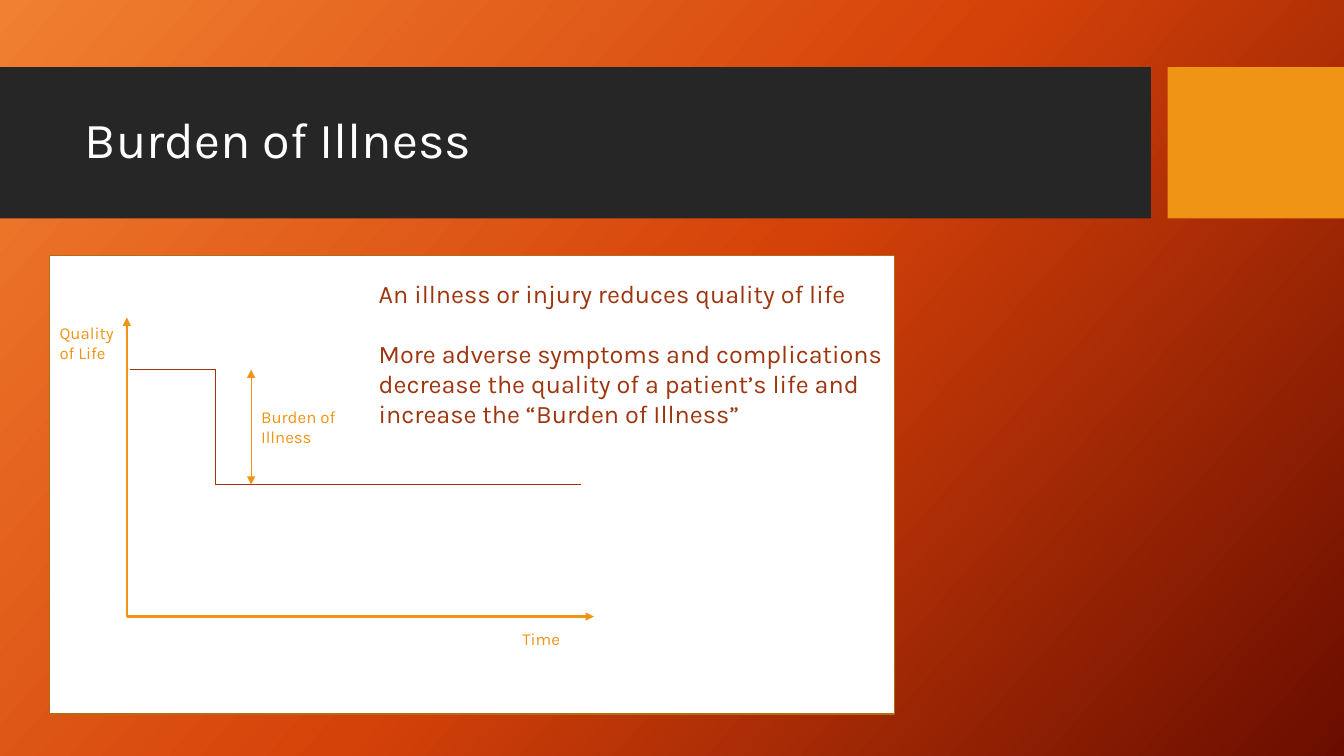
from copy import deepcopy
from dataclasses import dataclass

from lxml import etree
from pptx import Presentation
from pptx.dml.color import RGBColor
from pptx.enum.shapes import MSO_CONNECTOR, MSO_SHAPE
from pptx.enum.text import MSO_ANCHOR, MSO_AUTO_SIZE, PP_ALIGN
from pptx.oxml.ns import qn
from pptx.util import Inches, Pt

RECTANGLE = MSO_SHAPE.RECTANGLE
STRAIGHT = MSO_CONNECTOR.STRAIGHT
MIDDLE = MSO_ANCHOR.MIDDLE
LEFT = PP_ALIGN.LEFT
NO_AUTOFIT = MSO_AUTO_SIZE.NONE
TITLE_ONLY = 5
COLUMNS, ROWS = 16, 9


@dataclass(frozen=True)
class Theme:
    font: str = "Karla"
    white: str = "FFFFFF"
    band: str = "262626"
    accent: str = "F09415"
    rust: str = "9D360E"
    border: str = "B26D10"
    gradient: tuple = ((0, "F18031"), (0.5, "D54209"), (1, "6A0D00"))
    gradient_angle: int = 42
    title_size: int = 36
    body_size: int = 18
    label_size: int = 12
    paragraph_gap: float = 21.5
    axis_width: float = 1.75
    curve_width: float = 0.75


class SlideBuilder:
    """Places styled elements on a grid of 16 columns and 9 rows."""

    def __init__(self, deck, theme):
        self.theme = theme
        self.column = deck.slide_width / COLUMNS
        self.row = deck.slide_height / ROWS
        self.page = deck.slides.add_slide(deck.slide_layouts[TITLE_ONLY])

    def place(self, left, top, width, height):
        return (round(left * self.column), round(top * self.row),
                round(width * self.column), round(height * self.row))

    def background(self):
        fill = self.page.background.fill
        fill.gradient()
        fill.gradient_angle = 360 - self.theme.gradient_angle
        stop_list = self.page.background.element.find(".//" + qn("a:gsLst"))
        stop_list.append(deepcopy(stop_list[-1]))
        for stop, (position, color) in zip(fill.gradient_stops, self.theme.gradient):
            stop.position = position
            stop.color.rgb = RGBColor.from_string(color)

    def block(self, area, color, border=None):
        shape = self.page.shapes.add_shape(RECTANGLE, *self.place(*area))
        shape.shadow.inherit = False
        shape.fill.solid()
        shape.fill.fore_color.rgb = RGBColor.from_string(color)
        if border:
            shape.line.color.rgb = RGBColor.from_string(border)
            shape.line.width = Pt(1)
        else:
            shape.line.fill.background()

    def style(self, paragraph, size, color):
        paragraph.alignment = LEFT
        for span in paragraph.runs:
            span.font.name = self.theme.font
            span.font.size = Pt(size)
            span.font.color.rgb = RGBColor.from_string(color)

    def title(self, area, text):
        box = self.page.shapes.title
        box.left, box.top, box.width, box.height = self.place(*area)
        box.element.getparent().append(box.element)
        frame = box.text_frame
        frame.text = text
        frame.auto_size = NO_AUTOFIT
        frame.vertical_anchor = MIDDLE
        frame.paragraphs[0].line_spacing = 0.9
        self.style(frame.paragraphs[0], self.theme.title_size, self.theme.white)

    def text(self, area, text, size, color):
        frame = self.page.shapes.add_textbox(*self.place(*area)).text_frame
        frame.word_wrap = True
        frame.text = text
        for index, paragraph in enumerate(frame.paragraphs):
            if index:
                paragraph.space_before = Pt(self.theme.paragraph_gap)
            self.style(paragraph, size, color)

    def label(self, area, text):
        self.text(area, text, self.theme.label_size, self.theme.accent)

    def line(self, start, end, color, width, arrows=()):
        ends = self.place(*start, *end)
        connector = self.page.shapes.add_connector(STRAIGHT, *ends)
        connector.line.color.rgb = RGBColor.from_string(color)
        connector.line.width = Pt(width)
        outline = connector.line._get_or_add_ln()
        for arrow in arrows:
            etree.SubElement(outline, qn(arrow), type="triangle")
        etree.SubElement(connector.element.spPr, qn("a:effectLst"))


def main():
    deck = Presentation()
    deck.slide_width, deck.slide_height = Inches(13.33), Inches(7.5)
    theme = Theme()
    slide = SlideBuilder(deck, theme)

    # Background and title band
    slide.background()
    slide.block((0, 0.8, 13.7, 1.8), theme.band)
    slide.block((13.9, 0.8, 2.1, 1.8), theme.accent)
    slide.title((0.89, 0.98, 12.61, 1.42), "Burden of Illness")

    # White panel
    slide.block((0.59, 3.04, 10.06, 5.46), theme.white, theme.border)

    # Axes
    origin = (1.51, 7.34)
    axis_top, axis_right = 3.78, 7.07
    for end in ((origin[0], axis_top), (axis_right, origin[1])):
        slide.line(origin, end, theme.accent, theme.axis_width, ["a:tailEnd"])
    slide.label((0.59, axis_top, 0.96, 0.62), "Quality of Life")
    slide.label((6.1, 7.42, 0.96, 0.36), "Time")

    # Quality of life curve: healthy level, drop at onset, ill level
    healthy, ill, onset = 4.4, 5.77, 2.57
    curve = [(1.55, healthy), (onset, healthy), (onset, ill), (6.92, ill)]
    for start, end in zip(curve, curve[1:]):
        slide.line(start, end, theme.rust, theme.curve_width)

    # Burden of illness: the gap between the two levels
    burden = 2.99
    slide.line((burden, healthy), (burden, ill), theme.accent,
               theme.curve_width, ["a:headEnd", "a:tailEnd"])
    slide.label((burden, 4.78, 1.16, 0.6), "Burden of Illness")

    # Explanation
    slide.text((4.39, 3.25, 6.88, 1.94),
               "An illness or injury reduces quality of life\n"
               "More adverse symptoms and complications decrease the quality "
               "of a patient’s life and increase the “Burden of Illness”",
               theme.body_size, theme.rust)

    deck.save("out.pptx")


if __name__ == "__main__":
    main()
